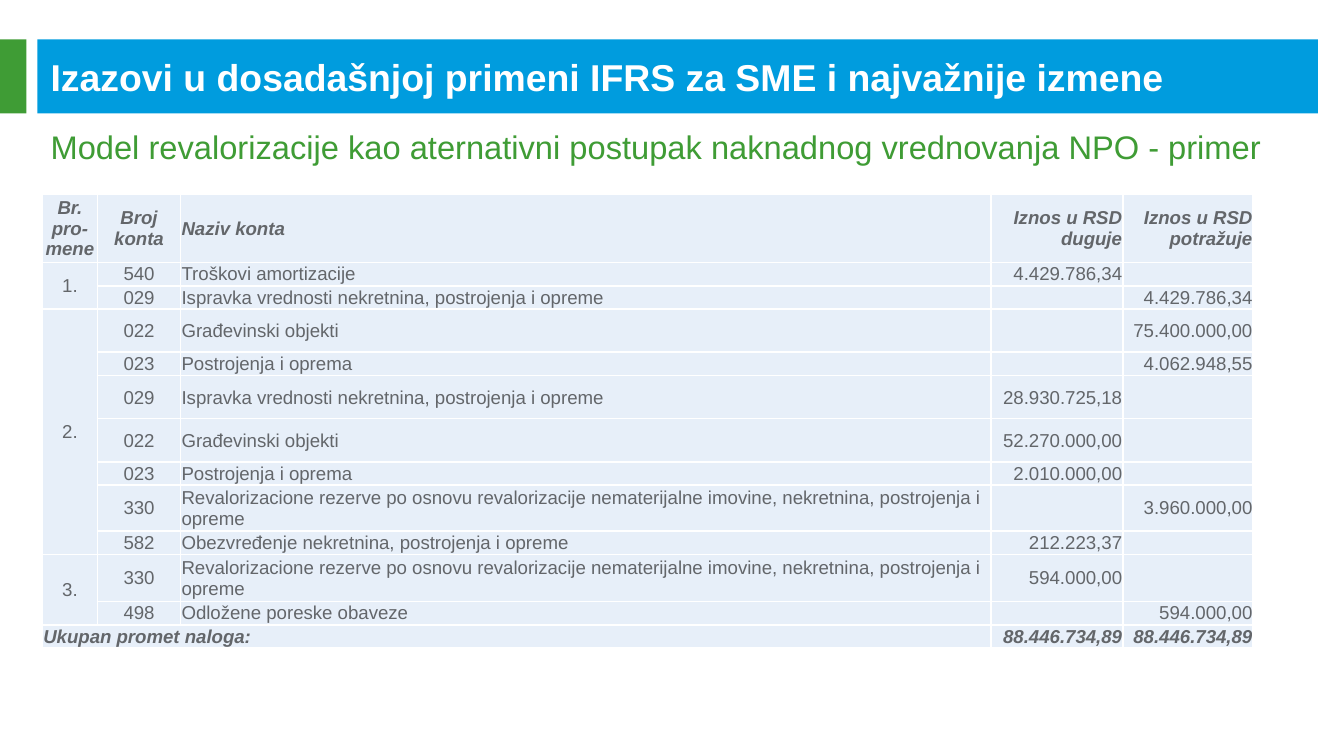
from dataclasses import dataclass

from lxml import etree
from pptx import Presentation
from pptx.dml.color import RGBColor
from pptx.enum.shapes import MSO_SHAPE
from pptx.enum.text import MSO_ANCHOR, PP_ALIGN
from pptx.oxml.ns import qn
from pptx.util import Pt

RECTANGLE = MSO_SHAPE.RECTANGLE
TOP, MIDDLE = MSO_ANCHOR.TOP, MSO_ANCHOR.MIDDLE
LEFT, CENTER, RIGHT = PP_ALIGN.LEFT, PP_ALIGN.CENTER, PP_ALIGN.RIGHT

FONT = "Arial"
COLORS = {
    "blue": "009CDE",
    "green": "3F9C35",
    "white": "FFFFFF",
    "gray": "63666A",
    "cell": "E7EFF9",
}


@dataclass
class Bar:
    left: float
    width: float
    color: str


@dataclass
class Heading:
    text: str
    top: float
    width: float
    height: float
    size: float
    color: str
    bold: bool
    anchor: MSO_ANCHOR
    margin_top: float


@dataclass
class Entry:
    account: str
    name: str
    debit: str
    credit: str
    height: float


BARS = [Bar(20, 686, "blue"), Bar(0, 14.2, "green")]
HEADINGS = [
    Heading("Izazovi u dosadašnjoj primeni IFRS za SME i najvažnije izmene",
            28.1, 680.4, 21.6, 20, "white", True, MIDDLE, 7.6),
    Heading("Model revalorizacije kao aternativni postupak naknadnog vrednovanja NPO - primer",
            62.6, 686, 38.2, 17.5, "green", False, TOP, 5.6),
]

# Table content
HEADER = ["Br. pro-mene", "Broj konta", "Naziv konta", "Iznos u RSD duguje", "Iznos u RSD potražuje"]
BUILDINGS = "Građevinski objekti"
EQUIPMENT = "Postrojenja i oprema"
CORRECTION = "Ispravka vrednosti nekretnina, postrojenja i opreme"
RESERVES = ("Revalorizacione rezerve po osnovu revalorizacije nematerijalne imovine, "
            "nekretnina, postrojenja i opreme")
TOTAL = "88.446.734,89"
LOW, HIGH = 11.8, 23.1
GROUPS = {
    "1.": [
        Entry("540", "Troškovi amortizacije", "4.429.786,34", "", LOW),
        Entry("029", CORRECTION, "", "4.429.786,34", LOW),
    ],
    "2.": [
        Entry("022", BUILDINGS, "", "75.400.000,00", HIGH),
        Entry("023", EQUIPMENT, "", "4.062.948,55", LOW),
        Entry("029", CORRECTION, "28.930.725,18", "", HIGH),
        Entry("022", BUILDINGS, "52.270.000,00", "", HIGH),
        Entry("023", EQUIPMENT, "2.010.000,00", "", LOW),
        Entry("330", RESERVES, "", "3.960.000,00", 24),
        Entry("582", "Obezvređenje nekretnina, postrojenja i opreme", "212.223,37", "", LOW),
    ],
    "3.": [
        Entry("330", RESERVES, "594.000,00", "", 25.2),
        Entry("498", "Odložene poreske obaveze", "", "594.000,00", LOW),
    ],
}
COLUMN_WIDTHS = [29.5, 44.6, 434.2, 70.6, 69.8]
ALIGNMENTS = [CENTER, CENTER, LEFT, RIGHT, RIGHT]
HEADER_HEIGHT = 33.8
TABLE_TEXT_SIZE = 10


def rgb(name: str) -> RGBColor:
    return RGBColor.from_string(COLORS[name])


def add_run(paragraph, text: str, size: float, color: str, bold: bool, italic: bool = False) -> None:
    run = paragraph.add_run()
    run.text = text
    run.font.name = FONT
    run.font.size = Pt(size)
    run.font.bold = bold
    run.font.italic = italic
    run.font.color.rgb = rgb(color)


def add_bar(slide, bar: Bar) -> None:
    shape = slide.shapes.add_shape(RECTANGLE, Pt(bar.left), Pt(21.1), Pt(bar.width), Pt(39.7))
    shape.shadow.inherit = False
    shape.fill.solid()
    shape.fill.fore_color.rgb = rgb(bar.color)
    shape.line.fill.background()


def add_heading(slide, heading: Heading) -> None:
    box = slide.shapes.add_textbox(Pt(20), Pt(heading.top), Pt(heading.width), Pt(heading.height))
    frame = box.text_frame
    frame.word_wrap = True
    frame.vertical_anchor = heading.anchor
    frame.margin_top = Pt(heading.margin_top)
    add_run(frame.paragraphs[0], heading.text, heading.size, heading.color, heading.bold)


def add_borders(cell) -> None:
    properties = cell._tc.get_or_add_tcPr()
    for side in ("lnL", "lnR", "lnT", "lnB"):
        line = etree.SubElement(properties, qn(f"a:{side}"), w=str(Pt(1)))
        fill = etree.SubElement(line, qn("a:solidFill"))
        etree.SubElement(fill, qn("a:srgbClr"), val=COLORS["white"])


def fill_cell(cell, text: str, alignment: PP_ALIGN, emphasis: bool) -> None:
    add_borders(cell)
    cell.fill.solid()
    cell.fill.fore_color.rgb = rgb("cell")
    cell.vertical_anchor = MIDDLE
    cell.margin_left = cell.margin_right = cell.margin_top = Pt(0.5)
    cell.margin_bottom = 0
    paragraph = cell.text_frame.paragraphs[0]
    paragraph.alignment = alignment
    if text:
        add_run(paragraph, text, TABLE_TEXT_SIZE, "gray", emphasis, emphasis)
    else:
        # Keeps empty cells from stretching their row
        etree.SubElement(paragraph._p, qn("a:endParaRPr"), sz=str(TABLE_TEXT_SIZE * 100))


def add_ledger(slide) -> None:
    rows, heights = [HEADER], [HEADER_HEIGHT]
    spans = []
    for number, entries in GROUPS.items():
        spans.append((len(rows), len(rows) + len(entries) - 1))
        for index, entry in enumerate(entries):
            label = number if index == 0 else ""
            rows.append([label, entry.account, entry.name, entry.debit, entry.credit])
            heights.append(entry.height)
    rows.append(["Ukupan promet naloga:", "", "", TOTAL, TOTAL])
    heights.append(LOW)

    last = len(rows) - 1
    frame = slide.shapes.add_table(len(rows), len(COLUMN_WIDTHS), Pt(22.7), Pt(104),
                                   Pt(sum(COLUMN_WIDTHS)), Pt(sum(heights)))
    table = frame.table
    table.first_row = table.horz_banding = False
    for column, width in zip(table.columns, COLUMN_WIDTHS):
        column.width = Pt(width)
    for row_index, (values, height) in enumerate(zip(rows, heights)):
        table.rows[row_index].height = Pt(height)
        for column_index, text in enumerate(values):
            total_label = row_index == last and column_index == 0
            alignment = LEFT if total_label else ALIGNMENTS[column_index]
            fill_cell(table.cell(row_index, column_index), text, alignment, row_index in (0, last))
    for first, end in spans:
        table.cell(first, 0).merge(table.cell(end, 0))
    table.cell(last, 0).merge(table.cell(last, 2))


def main() -> None:
    presentation = Presentation()
    presentation.slide_width = Pt(720)
    presentation.slide_height = Pt(405)
    slide = presentation.slides.add_slide(presentation.slide_layouts[6])
    # Title band
    for bar in BARS:
        add_bar(slide, bar)
    for heading in HEADINGS:
        add_heading(slide, heading)
    # Journal entries
    add_ledger(slide)
    presentation.save("out.pptx")


if __name__ == "__main__":
    main()
